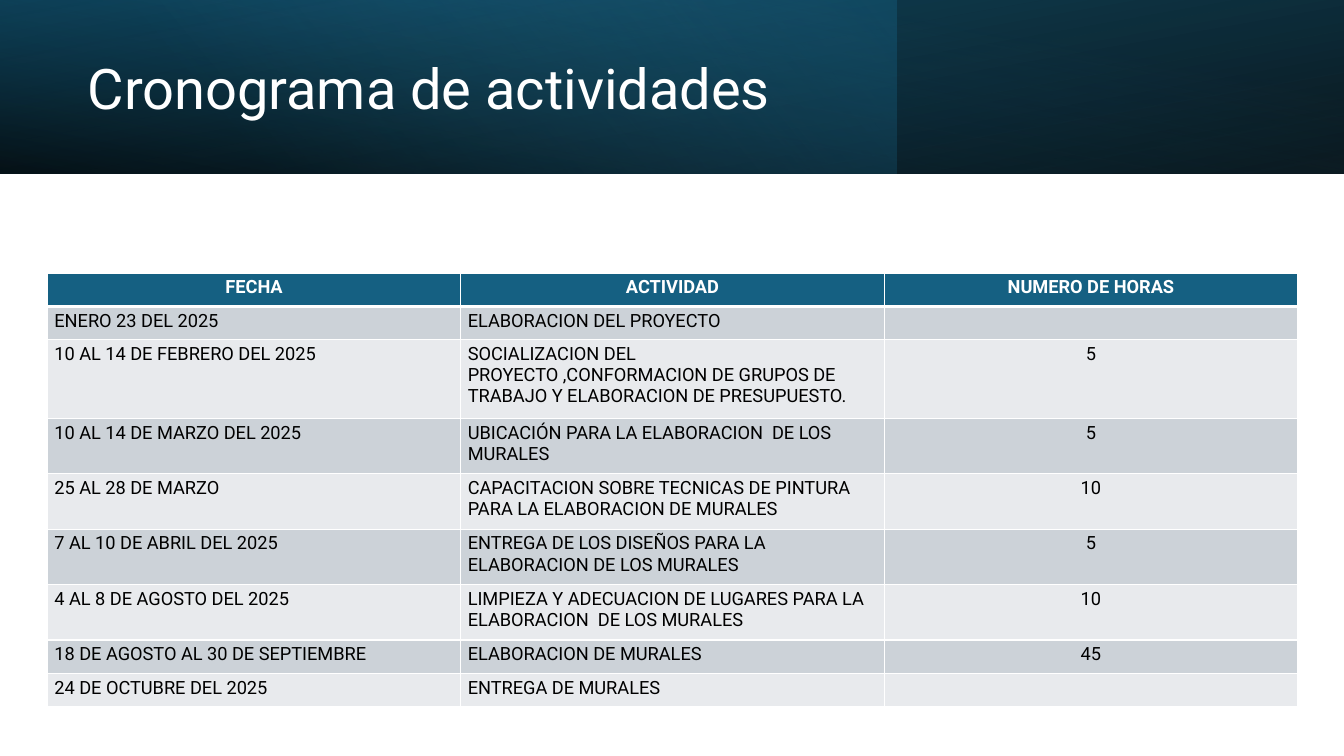
"""Build the activity schedule slide."""
from lxml.etree import SubElement
from pptx import Presentation
from pptx.dml.color import RGBColor
from pptx.enum.shapes import MSO_SHAPE
from pptx.enum.text import MSO_ANCHOR, MSO_AUTO_SIZE, PP_ALIGN
from pptx.oxml import parse_xml
from pptx.oxml.ns import nsdecls, qn
from pptx.util import Inches, Pt

TITLE = "Cronograma de actividades"
ROWS = [
    ("FECHA", "ACTIVIDAD", "NUMERO DE HORAS"),
    ("ENERO 23 DEL 2025", "ELABORACION DEL PROYECTO", ""),
    ("10 AL 14 DE FEBRERO DEL 2025",
     "SOCIALIZACION DEL PROYECTO ,CONFORMACION DE GRUPOS DE TRABAJO Y ELABORACION DE PRESUPUESTO.", "5"),
    ("10 AL 14 DE MARZO DEL 2025", "UBICACIÓN PARA LA ELABORACION  DE LOS MURALES", "5"),
    ("25 AL 28 DE MARZO",
     "CAPACITACION SOBRE TECNICAS DE PINTURA PARA LA ELABORACION DE MURALES", "10"),
    ("7 AL 10 DE ABRIL DEL 2025",
     "ENTREGA DE LOS DISEÑOS PARA LA ELABORACION DE LOS MURALES", "5"),
    ("4 AL 8 DE AGOSTO DEL 2025",
     "LIMPIEZA Y ADECUACION DE LUGARES PARA LA ELABORACION  DE LOS MURALES", "10"),
    ("18 DE AGOSTO AL 30 DE SEPTIEMBRE", "ELABORACION DE MURALES", "45"),
    ("24 DE OCTUBRE DEL 2025", "ENTREGA DE MURALES", ""),
]
COLS = [4.1, 4.2, 4.1]
HEIGHTS = [0.33, 0.33, 0.78, 0.55, 0.55, 0.55, 0.55, 0.33, 0.33]
COLORS = {"white": "FFFFFF", "black": "000000", "navy": "104862", "teal": "156082",
          "sky": "46B1E1", "odd": "CCD2D8", "even": "E8EAED"}
BANDS = [
    {"width": 13.33, "turn": 180, "flip": True, "angle": 100,
     "stops": [(0, "black", 96), (100, "navy", 100)]},
    {"width": 8.89, "turn": 0, "flip": False, "angle": 140,
     "stops": [(0, "teal", 41), (74, "sky", 0)]},
    {"width": 13.33, "turn": 0, "flip": True, "angle": 260,
     "stops": [(0, "black", 63), (78, "teal", 15)]},
]
BAND_H = 1.72
FONT = "Roboto"
INSETS = {"margin_left": 0.07, "margin_right": 0.07, "margin_top": 0.04, "margin_bottom": 0.04}


def style(font, size, color, bold=False):
    for key, value in {"name": FONT, "size": Pt(size), "bold": bold}.items():
        setattr(font, key, value)
    font.color.rgb = RGBColor.from_string(COLORS[color])


def add_band(slide, band):
    shape = slide.shapes.add_shape(MSO_SHAPE.RECTANGLE, 0, 0, Inches(band["width"]), Inches(BAND_H))
    shape.shadow.inherit = False
    shape.line.fill.background()
    shape.rotation = band["turn"]
    props = shape._element.spPr
    if band["flip"]:
        props.find(qn("a:xfrm")).set("flipH", "1")
    stops = "".join(
        f'<a:gs pos="{pos * 1000}"><a:srgbClr val="{COLORS[color]}">'
        f'<a:alpha val="{alpha * 1000}"/></a:srgbClr></a:gs>'
        for pos, color, alpha in band["stops"])
    grad = parse_xml(
        f'<a:gradFill {nsdecls("a")} rotWithShape="1"><a:gsLst>{stops}</a:gsLst>'
        f'<a:lin ang="{band["angle"] * 60000}" scaled="0"/></a:gradFill>')
    props.find(qn("a:prstGeom")).addnext(grad)


def add_title(slide):
    title = slide.shapes.title
    box = {"left": 0.77, "top": 0.27, "width": 7.72, "height": 1.27}
    for key, value in box.items():
        setattr(title, key, Inches(value))
    frame = title.text_frame
    frame.text = TITLE
    for key, value in {"word_wrap": True, "auto_size": MSO_AUTO_SIZE.NONE,
                       "vertical_anchor": MSO_ANCHOR.MIDDLE}.items():
        setattr(frame, key, value)
    para = frame.paragraphs[0]
    para.alignment = PP_ALIGN.LEFT
    para.line_spacing = 0.9
    style(para.runs[0].font, 40, "white")
    slide.shapes._spTree.append(title._element)


def add_borders(cell, head):
    props = cell._tc.get_or_add_tcPr()
    for i, side in enumerate(("lnL", "lnR", "lnT", "lnB")):
        width = 3 if head and side == "lnB" else 1
        props.insert(i, parse_xml(
            f'<a:{side} {nsdecls("a")} w="{Pt(width)}"><a:solidFill>'
            f'<a:srgbClr val="{COLORS["white"]}"/></a:solidFill></a:{side}>'))


def fill_cell(cell, text, row, col):
    head = row == 0
    for key, value in INSETS.items():
        setattr(cell, key, Inches(value))
    cell.fill.solid()
    tone = "teal" if head else "odd" if row % 2 else "even"
    cell.fill.fore_color.rgb = RGBColor.from_string(COLORS[tone])
    add_borders(cell, head)
    para = cell.text_frame.paragraphs[0]
    para.alignment = PP_ALIGN.CENTER if head or col == 2 else PP_ALIGN.LEFT
    if text:
        run = para.add_run()
        run.text = text
        style(run.font, 13, "white" if head else "black", head)
    else:
        SubElement(para._p, qn("a:endParaRPr")).set("sz", "1300")


def add_plan(slide):
    table = slide.shapes.add_table(
        len(ROWS), len(COLS), Inches(0.47), Inches(2.71),
        Inches(sum(COLS)), Inches(sum(HEIGHTS))).table
    for col, width in zip(table.columns, COLS):
        col.width = Inches(width)
    for r, (row, height) in enumerate(zip(ROWS, HEIGHTS)):
        table.rows[r].height = Inches(height)
        for c, text in enumerate(row):
            fill_cell(table.cell(r, c), text, r, c)


def main():
    deck = Presentation()
    deck.slide_width, deck.slide_height = Inches(13.33), Inches(7.5)
    slide = deck.slides.add_slide(deck.slide_layouts[5])
    for band in BANDS:
        add_band(slide, band)
    add_title(slide)
    add_plan(slide)
    deck.save("out.pptx")


if __name__ == "__main__":
    main()
